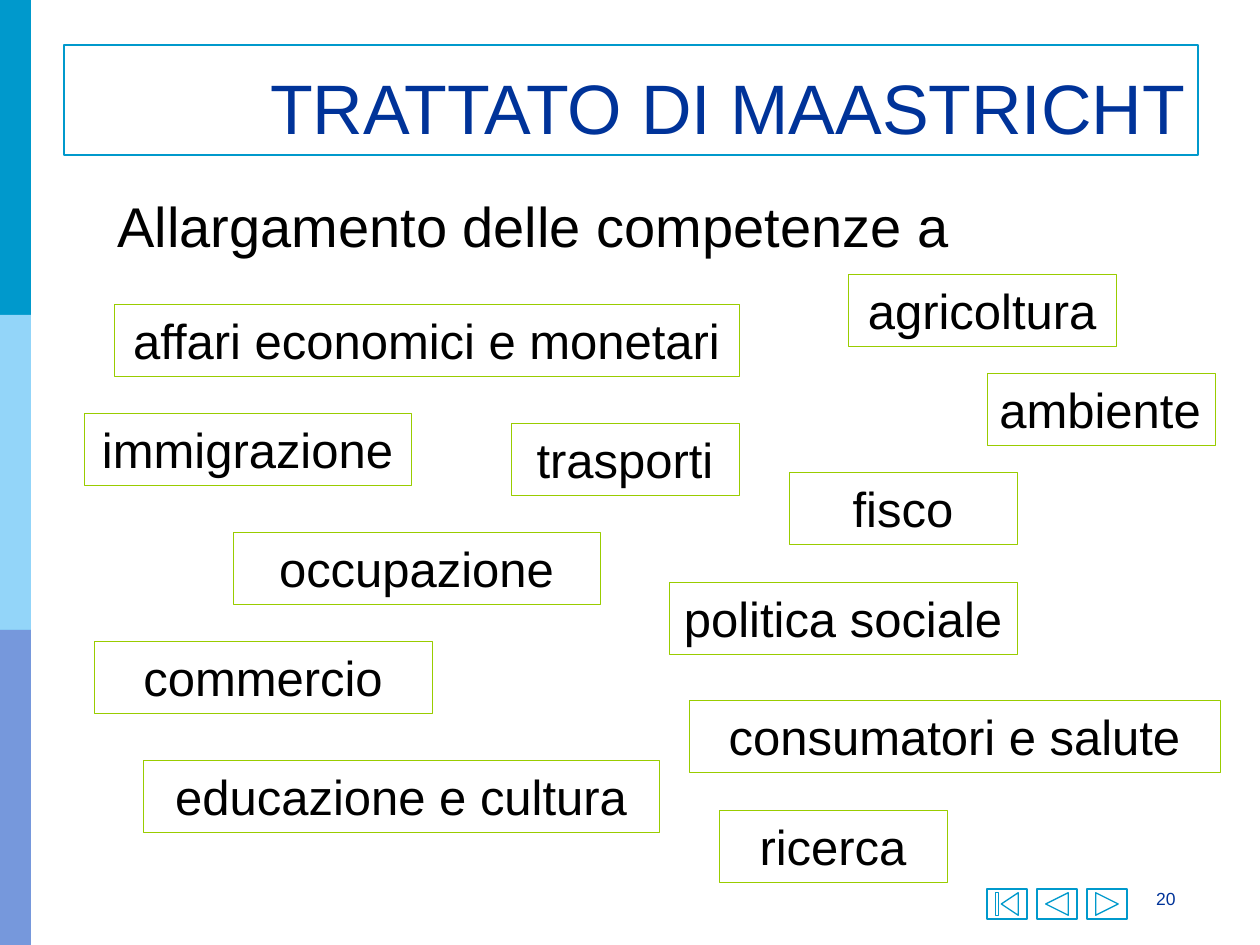
import pptx
import pptx.util
import pptx.dml.color
import pptx.enum.shapes
import pptx.enum.text
import lxml.etree

RGBColor = pptx.dml.color.RGBColor
SHAPE = pptx.enum.shapes.MSO_SHAPE
ALIGN = pptx.enum.text.PP_ALIGN
ANCHOR = pptx.enum.text.MSO_ANCHOR
FIT = pptx.enum.text.MSO_AUTO_SIZE

TEAL = RGBColor(0x00, 0x99, 0xCC)
SKY = RGBColor(0x93, 0xD5, 0xF9)
BLUE = RGBColor(0x33, 0x66, 0xCC)
NAVY = RGBColor(0x00, 0x33, 0x99)
GREEN = RGBColor(0x99, 0xCC, 0x00)
BLACK = RGBColor(0x00, 0x00, 0x00)

PX = 914400 / 126  # EMU per pixel

presentation = pptx.Presentation()
presentation.slide_width = round(1260 * PX)
presentation.slide_height = round(945 * PX)
slide = presentation.slides.add_slide(presentation.slide_layouts[6])


def add_box(kind, left, top, width, height, fill=None, line=None, line_width=0.75):
    shape = slide.shapes.add_shape(kind, *(round(n * PX) for n in (left, top, width, height)))
    shape.shadow.inherit = False
    if fill is None:
        shape.fill.background()
    else:
        shape.fill.solid()
        shape.fill.fore_color.rgb = fill
    if line is None:
        shape.line.fill.background()
    else:
        shape.line.color.rgb = line
        shape.line.width = pptx.util.Pt(line_width)
    return shape


def write_text(shape, text, size=28, color=BLACK, align=ALIGN.LEFT, anchor=ANCHOR.TOP, fit=FIT.NONE):
    frame = shape.text_frame
    frame.word_wrap = True
    frame.auto_size = fit
    frame.vertical_anchor = anchor
    paragraph = frame.paragraphs[0]
    paragraph.alignment = align
    run = paragraph.add_run()
    run.text = text
    run.font.name = "Arial"
    run.font.size = pptx.util.Pt(size)
    run.font.color.rgb = color


# Side band: three equal blocks, the last one translucent
for row, color in enumerate((TEAL, SKY, BLUE)):
    band = add_box(SHAPE.RECTANGLE, 0, 315 * row, 31, 315, fill=color)
color_element = band.fill._xPr.find(".//" + pptx.oxml.ns.qn("a:srgbClr"))
lxml.etree.SubElement(color_element, pptx.oxml.ns.qn("a:alpha"), val="67000")

# Navigation buttons and slide number
buttons = (SHAPE.ACTION_BUTTON_BEGINNING, SHAPE.ACTION_BUTTON_BACK_OR_PREVIOUS,
           SHAPE.ACTION_BUTTON_FORWARD_OR_NEXT)
for column, kind in enumerate(buttons):
    add_box(kind, 987 + 50 * column, 889, 40, 30, line=TEAL)
number = slide.shapes.add_textbox(*(round(n * PX) for n in (1067, 882, 121, 63)))
write_text(number, "20", size=10, color=NAVY, align=ALIGN.RIGHT)

# Title and lead line
title = add_box(SHAPE.RECTANGLE, 64, 45, 1134, 110, line=TEAL)
write_text(title, "TRATTATO DI MAASTRICHT", size=40, color=NAVY,
           align=ALIGN.RIGHT, anchor=ANCHOR.BOTTOM)
lead = slide.shapes.add_textbox(*(round(n * PX) for n in (105, 185, 1072, 79)))
write_text(lead, "Allargamento delle competenze a", size=32, fit=FIT.SHAPE_TO_FIT_TEXT)

# Policy areas: left, top, width, label, alignment
areas = (
    (114, 304, 625, "affari economici e monetari", ALIGN.CENTER),
    (848, 274, 268, "agricoltura", ALIGN.CENTER),
    (84, 413, 327, "immigrazione", ALIGN.CENTER),
    (511, 423, 228, "trasporti", ALIGN.CENTER),
    (789, 472, 228, "fisco", ALIGN.CENTER),
    (233, 532, 367, "occupazione", ALIGN.CENTER),
    (94, 641, 338, "commercio", ALIGN.CENTER),
    (669, 582, 348, "politica sociale", ALIGN.CENTER),
    (143, 760, 516, "educazione e cultura", ALIGN.CENTER),
    (689, 700, 531, "consumatori e salute", ALIGN.CENTER),
    (719, 810, 228, "ricerca", ALIGN.CENTER),
    (987, 373, 228, "ambiente", ALIGN.LEFT),
)
for left, top, width, label, align in areas:
    area = add_box(SHAPE.RECTANGLE, left, top, width, 72, line=GREEN, line_width=0.25)
    write_text(area, label, align=align, fit=FIT.SHAPE_TO_FIT_TEXT)

presentation.save("out.pptx")
